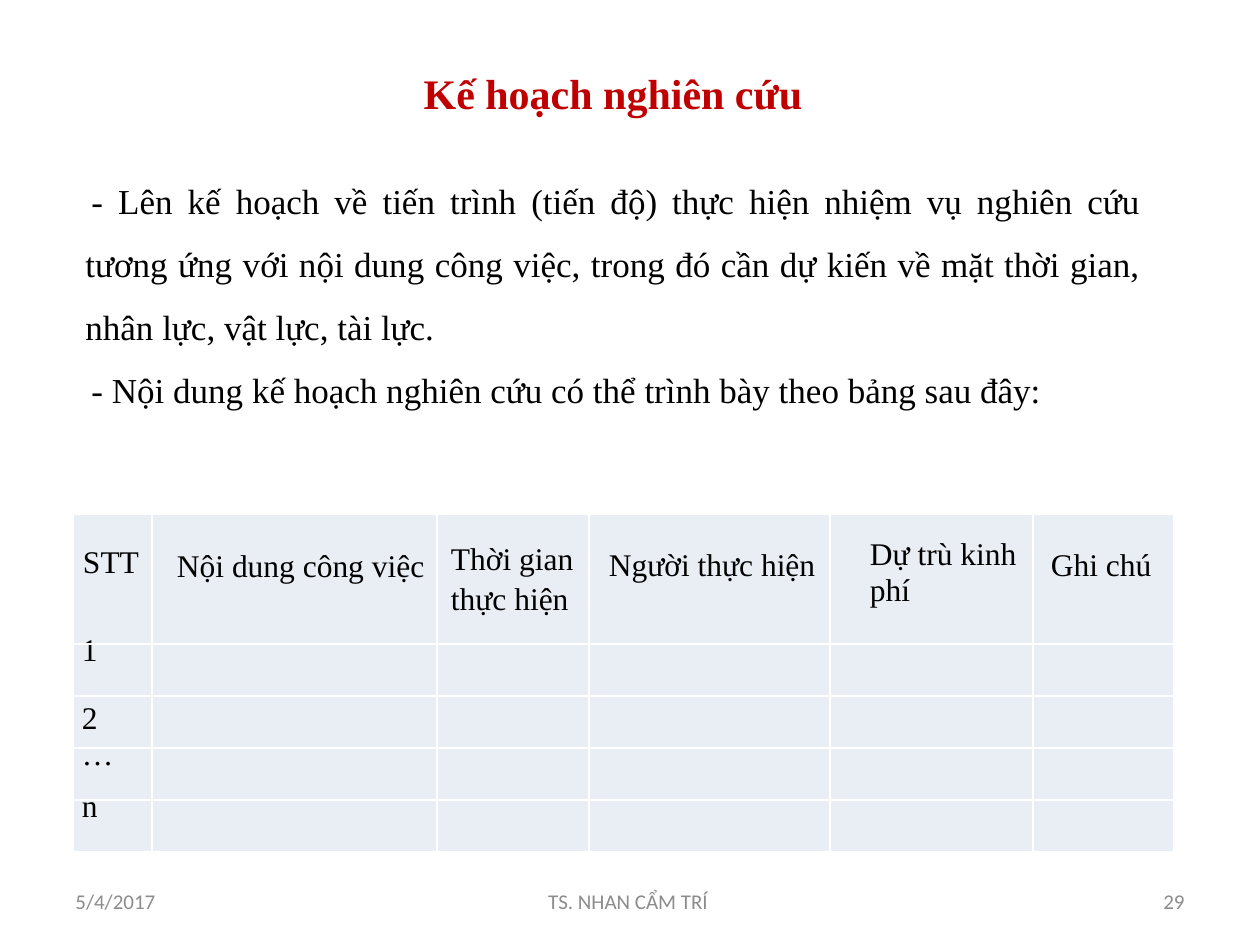
from dataclasses import dataclass

from lxml.etree import SubElement
from pptx import Presentation
from pptx.dml.color import RGBColor as Color
from pptx.enum.text import MSO_ANCHOR as Anchor, PP_ALIGN as Align
from pptx.oxml.ns import qn
from pptx.util import Emu, Pt

PX = 914400 / 126  # EMU in one px


@dataclass(frozen=True)
class Theme:
    serif: str = "Times New Roman"
    sans: str = "Calibri"
    title_color: str = "C00000"
    text_color: str = "000000"
    footer_color: str = "8C8C8C"
    cell_color: str = "E9EDF4"
    border_color: str = "FFFFFF"
    title_size: int = 24
    body_size: int = 20
    table_size: int = 18
    footer_size: int = 12


def px(length):
    return Emu(round(length * PX))


def write(paragraph, text, *, font, size, color, bold=False, align=Align.LEFT,
          line=None, before=0, indent=0):
    paragraph.alignment = align
    paragraph.space_before = Pt(before)
    if line:
        paragraph.line_spacing = line
    if indent:
        paragraph._p.get_or_add_pPr().set("indent", str(px(indent)))
    run = paragraph.add_run()
    run.text = text
    run.font.name = font
    run.font.size = Pt(size)
    run.font.bold = bold
    run.font.color.rgb = Color.from_string(color)


class SlideBuilder:
    def __init__(self, slide, theme):
        self.slide = slide
        self.theme = theme

    def text(self, box, paragraphs, **style):
        """Add a text box; each paragraph is (text, own format)."""
        shape = self.slide.shapes.add_textbox(*map(px, box))
        self.fill_frame(shape.text_frame, paragraphs, **style)
        shape.text_frame.word_wrap = True
        shape.text_frame.vertical_anchor = Anchor.MIDDLE

    def fill_frame(self, frame, paragraphs, **style):
        for number, (text, own) in enumerate(paragraphs):
            paragraph = frame.add_paragraph() if number else frame.paragraphs[0]
            write(paragraph, text, **(style | own))

    def footer(self, box, text, align):
        theme = self.theme
        self.text(box, [(text, {})], font=theme.sans, size=theme.footer_size,
                  color=theme.footer_color, align=align)

    def table(self, left, top, widths, heights):
        frame = self.slide.shapes.add_table(
            len(heights), len(widths), px(left), px(top),
            px(sum(widths)), px(sum(heights)))
        table = frame.table
        table.first_row = table.horz_banding = False
        for column, width in zip(table.columns, widths):
            column.width = px(width)
        for row, height in zip(table.rows, heights):
            row.height = px(height)
        for cell in table.iter_cells():
            self.style_cell(cell)
        return table

    def style_cell(self, cell):
        cell.margin_left = cell.margin_right = 0
        cell.margin_top = cell.margin_bottom = 0
        properties = cell._tc.get_or_add_tcPr()
        for side in ("lnL", "lnR", "lnT", "lnB"):
            border = SubElement(properties, qn(f"a:{side}"), w=str(Pt(1)))
            fill = SubElement(border, qn("a:solidFill"))
            SubElement(fill, qn("a:srgbClr"), val=self.theme.border_color)
        cell.fill.solid()
        cell.fill.fore_color.rgb = Color.from_string(self.theme.cell_color)

    def cell_text(self, cell, lines, left, top=0, right=0, line=1.15):
        theme = self.theme
        cell.margin_left, cell.margin_right = px(left), px(right)
        cell.margin_top = Pt(top)
        self.fill_frame(cell.text_frame, [(text, {}) for text in lines],
                        font=theme.serif, size=theme.table_size,
                        color=theme.text_color, line=line)


def main():
    presentation = Presentation()
    presentation.slide_width, presentation.slide_height = px(1260), px(945)
    slide = presentation.slides.add_slide(presentation.slide_layouts[6])
    theme = Theme()
    builder = SlideBuilder(slide, theme)

    # Plan table: header cells, then the numbered rows
    table = builder.table(73, 514, [79, 285, 152, 241, 203, 141], [130] + [52] * 4)
    headers = [
        (["STT"], dict(left=10, top=15)),
        (["Nội dung công việc"], dict(left=25, top=17.5)),
        (["Thời gian", "thực hiện"], dict(left=14, top=13)),
        (["Người thực hiện"], dict(left=20, top=16.5)),
        (["Dự trù kinh phí"], dict(left=40, top=13, right=5, line=1.02)),
        (["Ghi chú"], dict(left=18, top=16.5)),
    ]
    for column, (lines, layout) in enumerate(headers):
        builder.cell_text(table.cell(0, column), lines, **layout)
    tight = Pt(13.6)
    for row, (label, line) in enumerate(
            [("1", tight), ("2", 1.15), ("…", tight), ("n", tight)], start=1):
        builder.cell_text(table.cell(row, 0), [label], left=9, line=line)

    # Title and body
    body = dict(align=Align.JUSTIFY, line=1.5, indent=6)
    builder.text((73, 59, 1080, 360), [
        ("Kế hoạch nghiên cứu",
         dict(size=theme.title_size, color=theme.title_color, bold=True,
              align=Align.CENTER)),
        ("- Lên kế hoạch về tiến trình (tiến độ) thực hiện nhiệm vụ nghiên cứu "
         "tương ứng với nội dung công việc, trong đó cần dự kiến về mặt thời gian, "
         "nhân lực, vật lực, tài lực.", body | dict(before=23)),
        ("- Nội dung kế hoạch nghiên cứu có thể trình bày theo bảng sau đây:", body),
    ], font=theme.serif, size=theme.body_size, color=theme.text_color)

    # Footer
    builder.footer((63, 876, 294, 50), "5/4/2017", Align.LEFT)
    builder.footer((431, 876, 399, 50), "TS. NHAN CẨM TRÍ ", Align.CENTER)
    builder.footer((903, 876, 294, 50), "29", Align.RIGHT)

    presentation.save("out.pptx")


if __name__ == "__main__":
    main()
